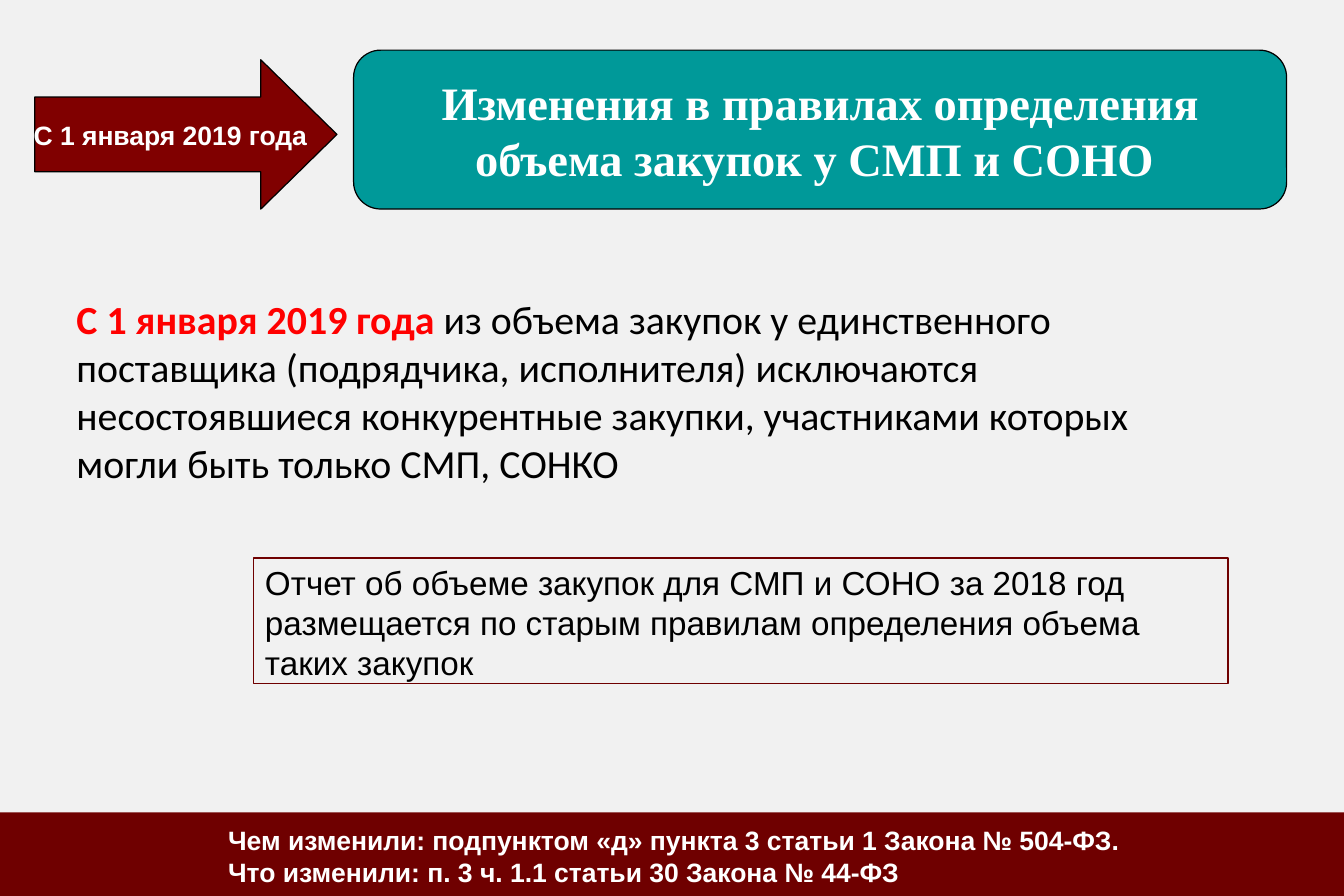
import dataclasses
import typing

import lxml.etree
import pptx
import pptx.dml.color
import pptx.enum.shapes
import pptx.enum.text
import pptx.oxml.ns
import pptx.util

SLIDE_WIDTH, SLIDE_HEIGHT = 11.25, 7.5
GRID = 100  # columns and rows across the slide

PAPER, MAROON, DARK_RED, TEAL = "F1F1F1", "6F0000", "800000", "009999"
WHITE, BLACK, RED = "FFFFFF", "000000", "FF0000"

SHAPES = pptx.enum.shapes.MSO_SHAPE
ALIGN = pptx.enum.text.PP_ALIGN
ANCHOR = pptx.enum.text.MSO_ANCHOR


@dataclasses.dataclass(frozen=True)
class Area:
    """Left, top, width and height in columns and rows of the grid."""
    column: float
    row: float
    columns: float
    rows: float


@dataclasses.dataclass(frozen=True)
class Panel:
    kind: pptx.enum.shapes.MSO_SHAPE
    area: Area
    fill: str
    line: typing.Optional[str] = None
    line_width: float = 0.75
    adjustments: tuple[float, ...] = ()


TITLE_AREA = Area(26.31, 5.6, 69.42, 17.73)
BODY_AREA = Area(4.8, 32.27, 85.42, 34.4)
FOOTER_TEXT_AREA = Area(16.89, 91.87, 75.02, 7.33)

FOOTER_BAND = Panel(SHAPES.RECTANGLE, Area(0, 90.67, 100, 9.33), MAROON)
TITLE_PANEL = Panel(SHAPES.ROUNDED_RECTANGLE, TITLE_AREA, TEAL, BLACK, adjustments=(0.17,))
DATE_ARROW = Panel(SHAPES.RIGHT_ARROW, Area(2.58, 6.67, 22.49, 16.67), DARK_RED, BLACK,
                   adjustments=(0.5, 0.51))
REPORT_NOTE = Panel(SHAPES.RECTANGLE, Area(18.84, 62.27, 72.53, 14), PAPER, MAROON, 0.72)


def color(hex_value: str) -> pptx.dml.color.RGBColor:
    return pptx.dml.color.RGBColor.from_string(hex_value)


def box(area: Area) -> tuple[int, int, int, int]:
    """Turn grid units into slide lengths."""
    return (pptx.util.Inches(area.column * SLIDE_WIDTH / GRID),
            pptx.util.Inches(area.row * SLIDE_HEIGHT / GRID),
            pptx.util.Inches(area.columns * SLIDE_WIDTH / GRID),
            pptx.util.Inches(area.rows * SLIDE_HEIGHT / GRID))


def add_panel(slide, panel: Panel):
    shape = slide.shapes.add_shape(panel.kind, *box(panel.area))
    shape.shadow.inherit = False
    shape.fill.solid()
    shape.fill.fore_color.rgb = color(panel.fill)
    if panel.line:
        shape.line.color.rgb = color(panel.line)
        shape.line.width = pptx.util.Pt(panel.line_width)
    else:
        shape.line.fill.background()
    for index, value in enumerate(panel.adjustments):
        shape.adjustments[index] = value
    return shape


def place(shape, area: Area) -> None:
    shape.left, shape.top, shape.width, shape.height = box(area)


def set_frame(shape, margins=(0.1, 0.05, 0.1, 0.05), anchor=ANCHOR.TOP, wrap=True):
    """Set margins in inches (left, top, right, bottom), anchor and wrapping."""
    frame = shape.text_frame
    frame.auto_size = pptx.enum.text.MSO_AUTO_SIZE.NONE
    frame.word_wrap = wrap
    frame.vertical_anchor = anchor
    (frame.margin_left, frame.margin_top,
     frame.margin_right, frame.margin_bottom) = map(pptx.util.Inches, margins)
    return frame


def write(paragraph, text: str, *, size: float, ink: str, font: str = "Arial",
          bold: bool = False, align=ALIGN.LEFT, before: float = 0) -> None:
    paragraph.alignment = align
    paragraph.space_before = pptx.util.Pt(before)
    run = paragraph.add_run()
    run.text = text
    run.font.name = font
    run.font.size = pptx.util.Pt(size)
    run.font.bold = bold
    run.font.color.rgb = color(ink)


def remove_bullet(paragraph) -> None:
    properties = paragraph._p.get_or_add_pPr()
    properties.set("marL", "0")
    properties.set("indent", "0")
    lxml.etree.SubElement(properties, pptx.oxml.ns.qn("a:buNone"))


def add_footer(slide) -> None:
    add_panel(slide, FOOTER_BAND)
    text_box = slide.shapes.add_textbox(*box(FOOTER_TEXT_AREA))
    frame = set_frame(text_box, margins=(0.01, 0.01, 0, 0))
    style = dict(size=16, ink=WHITE, bold=True)
    write(frame.paragraphs[0],
          "Чем изменили: подпунктом «д» пункта 3 статьи 1 Закона № 504-ФЗ.", before=1, **style)
    write(frame.add_paragraph(), "Что изменили: п. 3 ч. 1.1 статьи 30 Закона № 44-ФЗ", **style)


def add_heading(slide) -> None:
    panel = add_panel(slide, TITLE_PANEL)
    title = slide.shapes.title
    place(title, TITLE_AREA)
    panel._element.addnext(title._element)
    frame = set_frame(title, margins=(0.17, 0.05, 0.17, 0.05), anchor=ANCHOR.MIDDLE)
    write(frame.paragraphs[0], "Изменения в правилах определения объема закупок у СМП и СОНО ",
          size=28, ink=WHITE, font="Times New Roman", bold=True, align=ALIGN.CENTER)

    arrow = add_panel(slide, DATE_ARROW)
    frame = set_frame(arrow, margins=(0.16, 0.05, 0.1, 0.05), anchor=ANCHOR.MIDDLE, wrap=False)
    write(frame.paragraphs[0], "С 1 января 2019 года",
          size=16, ink=WHITE, bold=True, align=ALIGN.CENTER)


def add_rule(slide) -> None:
    body = slide.placeholders[1]
    place(body, BODY_AREA)
    paragraph = set_frame(body).paragraphs[0]
    style = dict(size=24, font="Calibri", before=4.8)
    write(paragraph, "С 1 января 2019 года ", ink=RED, bold=True, **style)
    write(paragraph, "из объема закупок у единственного поставщика (подрядчика, исполнителя) "
          "исключаются несостоявшиеся конкурентные закупки, участниками которых могли быть "
          "только СМП, СОНКО", ink=BLACK, **style)
    remove_bullet(paragraph)


def add_report_note(slide) -> None:
    note = add_panel(slide, REPORT_NOTE)
    frame = set_frame(note, margins=(0.1, 0.04, 0, 0))
    write(frame.paragraphs[0], "Отчет об объеме закупок для СМП и СОНО за 2018 год размещается "
          "по старым правилам определения объема таких закупок", size=20, ink=BLACK, before=3.1)


def main() -> None:
    presentation = pptx.Presentation()
    presentation.slide_width = pptx.util.Inches(SLIDE_WIDTH)
    presentation.slide_height = pptx.util.Inches(SLIDE_HEIGHT)
    slide = presentation.slides.add_slide(presentation.slide_layouts.get_by_name("Title and Content"))
    slide.background.fill.solid()
    slide.background.fill.fore_color.rgb = color(PAPER)
    add_footer(slide)
    add_heading(slide)
    add_rule(slide)
    add_report_note(slide)
    presentation.save("out.pptx")


if __name__ == "__main__":
    main()
